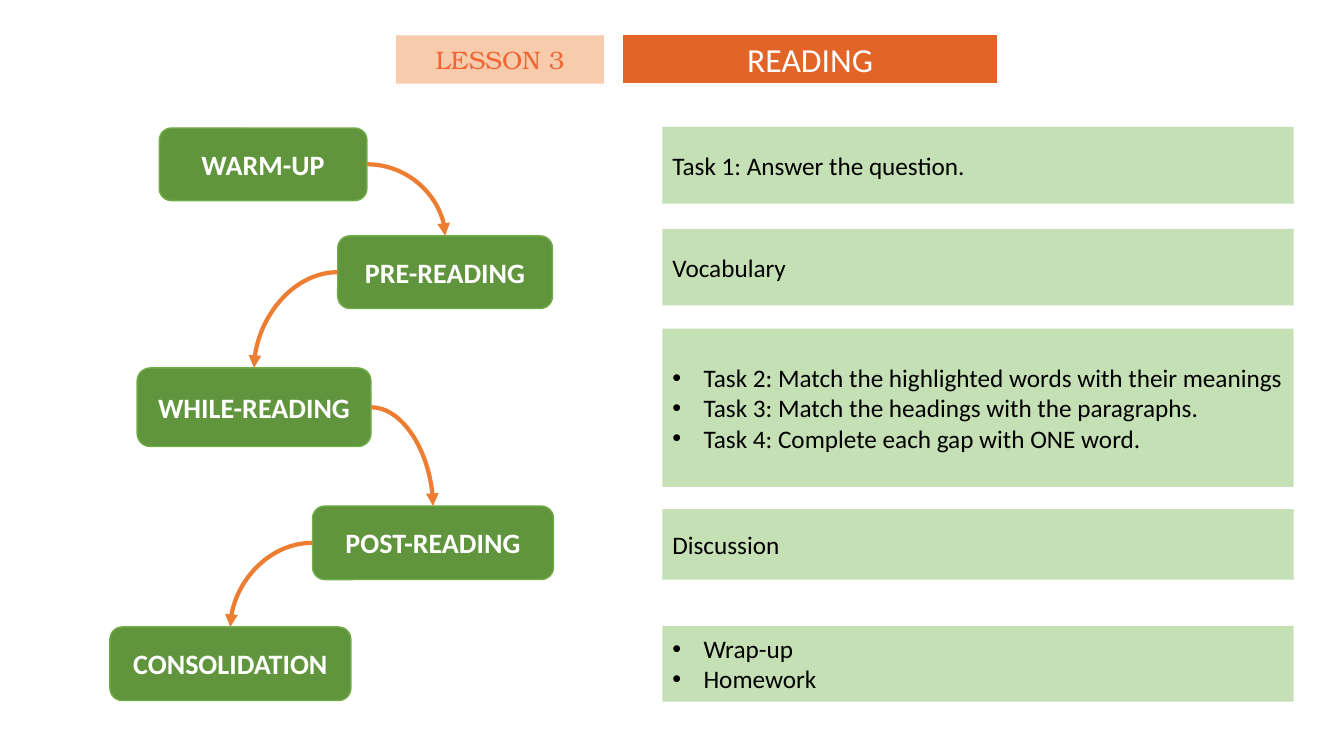
from lxml import etree
from pptx import Presentation
from pptx.dml.color import RGBColor
from pptx.enum.shapes import MSO_CONNECTOR, MSO_SHAPE
from pptx.enum.text import MSO_ANCHOR, PP_ALIGN
from pptx.oxml.ns import qn
from pptx.util import Inches, Pt

RECTANGLE = MSO_SHAPE.RECTANGLE
ROUNDED = MSO_SHAPE.ROUNDED_RECTANGLE
CURVE = MSO_CONNECTOR.CURVE
MIDDLE = MSO_ANCHOR.MIDDLE
LEFT, CENTER = PP_ALIGN.LEFT, PP_ALIGN.CENTER
TITLE_ONLY = 5
TOP_SITE, LEFT_SITE, RIGHT_SITE = 0, 1, 3

COLORS = {
    "step": "61953D",
    "step_edge": "70AD47",
    "task": "C5E0B4",
    "arrow": "ED7D31",
    "title": "E36427",
    "lesson": "F8CBAD",
    "lesson_text": "F26532",
    "white": "FFFFFF",
    "black": "000000",
}

STEPS = [
    ("WARM-UP", 1.58, 1.27, 2.06, 0.72),
    ("PRE-READING", 3.35, 2.34, 2.13, 0.72),
    ("WHILE-READING", 1.36, 3.65, 2.32, 0.78),
    ("POST-READING", 3.1, 5.02, 2.39, 0.73),
    ("CONSOLIDATION", 1.09, 6.22, 2.39, 0.73),
]

TASKS = [
    (1.26, 0.76, ["Task 1: Answer the question."]),
    (2.27, 0.76, ["Vocabulary"]),
    (3.26, 1.57, [
        "Task 2: Match the highlighted words with their meanings",
        "Task 3: Match the headings with the paragraphs.",
        "Task 4: Complete each gap with ONE word.",
    ]),
    (5.05, 0.7, ["Discussion"]),
    (6.21, 0.75, ["Wrap-up", "Homework"]),
]


def color(name):
    return RGBColor.from_string(COLORS[name])


def paint(shape, fill, edge=None, width=1):
    shape.fill.solid()
    shape.fill.fore_color.rgb = color(fill)
    if edge:
        shape.line.color.rgb = color(edge)
        shape.line.width = Pt(width)
    else:
        shape.line.fill.background()


def write(shape, lines, size, text_color, align=CENTER, bold=False, font="Calibri"):
    frame = shape.text_frame
    frame.word_wrap = True
    frame.vertical_anchor = MIDDLE
    frame.text = "\n".join(lines)
    for para in frame.paragraphs:
        para.alignment = align
        para.font.name = font
        para.font.size = Pt(size)
        para.font.bold = bold
        para.font.color.rgb = color(text_color)


def add_bullets(shape):
    indent = Inches(0.31)
    for para in shape.text_frame.paragraphs:
        properties = para._p.get_or_add_pPr()
        properties.set("marL", str(indent))
        properties.set("indent", str(-indent))
        bullet_font = etree.Element(qn("a:buFont"), typeface="Arial")
        bullet = etree.Element(qn("a:buChar"), char="•")
        properties.insert(0, bullet_font)
        properties.insert(1, bullet)


def add_box(page, kind, left, top, width, height):
    box = page.shapes.add_shape(
        kind, Inches(left), Inches(top), Inches(width), Inches(height))
    box.shadow.inherit = False
    return box


def add_title(page):
    title = page.shapes.title
    title.left, title.top = Inches(6.17), Inches(0.34)
    title.width, title.height = Inches(3.73), Inches(0.49)
    paint(title, "title", "white", 1.5)
    write(title, ["READING"], 24, "white")


def add_lesson(page):
    lesson = add_box(page, RECTANGLE, 3.93, 0.35, 2.06, 0.48)
    paint(lesson, "lesson")
    write(lesson, ["LESSON 3"], 18, "lesson_text", font="TeX Gyre Bonum")


def add_step(page, name, left, top, width, height):
    step = add_box(page, ROUNDED, left, top, width, height)
    paint(step, "step", "step_edge")
    write(step, [name], 20, "white", bold=True)
    return step


def add_task(page, top, height, lines):
    task = add_box(page, RECTANGLE, 6.57, top, 6.26, height)
    paint(task, "task")
    write(task, lines, 18, "black", align=LEFT)
    if len(lines) > 1:
        add_bullets(task)


def add_arrow(page, start, end):
    arrow = page.shapes.add_connector(CURVE, 0, 0, 0, 0)
    side = RIGHT_SITE if end.left > start.left else LEFT_SITE
    arrow.begin_connect(start, side)
    arrow.end_connect(end, TOP_SITE)
    arrow.line.color.rgb = color("arrow")
    arrow.line.width = Pt(3)
    properties = arrow._element.spPr
    properties.find(qn("a:prstGeom")).set("prst", "curvedConnector2")
    etree.SubElement(arrow.line._get_or_add_ln(), qn("a:tailEnd"), type="triangle")
    etree.SubElement(properties, qn("a:effectLst"))


def main():
    deck = Presentation()
    deck.slide_width, deck.slide_height = Inches(13.33), Inches(7.5)
    page = deck.slides.add_slide(deck.slide_layouts[TITLE_ONLY])
    add_title(page)
    add_lesson(page)
    steps = [add_step(page, *step) for step in STEPS]
    for start, end in zip(steps, steps[1:]):
        add_arrow(page, start, end)
    for task in TASKS:
        add_task(page, *task)
    deck.save("out.pptx")


if __name__ == "__main__":
    main()
